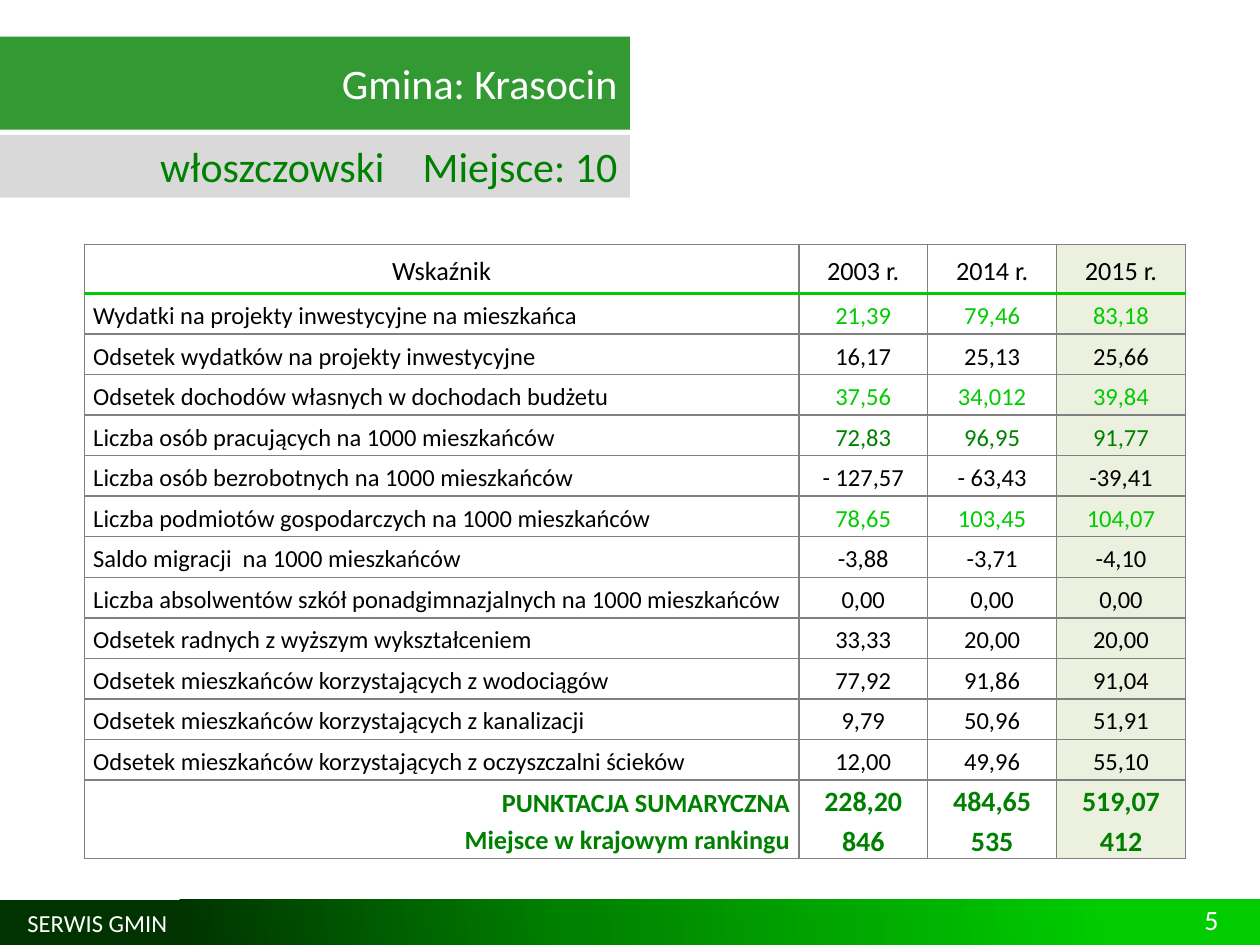
from copy import deepcopy
from dataclasses import dataclass
from typing import NamedTuple

from pptx import Presentation
from pptx.dml.color import RGBColor
from pptx.enum.shapes import MSO_SHAPE as Preset
from pptx.enum.text import MSO_ANCHOR as Anchor, PP_ALIGN as Align
from pptx.oxml import parse_xml
from pptx.oxml.ns import nsdecls, qn
from pptx.util import Inches, Pt

# The slide is a grid of 100 columns by 75 rows.
COLUMNS, ROWS = 100, 75
UNIT = Inches(0.1)


@dataclass(frozen=True)
class Theme:
    font: str = "Calibri"
    black: str = "000000"
    white: str = "FFFFFF"
    bright: str = "00CC00"
    green: str = "008000"
    deep: str = "003300"
    title_bar: str = "339933"
    subtitle_bar: str = "D9D9D9"
    latest_year: str = "EBF1DE"
    rule: str = "808080"
    heading: int = 24
    total: int = 16
    label: int = 15
    body: int = 14


class Area(NamedTuple):
    left: float
    top: float
    width: float
    height: float


class Style(NamedTuple):
    size: int
    color: str
    align: Align = Align.LEFT
    bold: bool = False


class Indicator(NamedTuple):
    name: str
    values: tuple[str, ...]
    color: str


THEME = Theme()
YEARS = ("2003 r.", "2014 r.", "2015 r.")
INDICATORS = [
    Indicator("Wydatki na projekty inwestycyjne na mieszkańca", ("21,39", "79,46", "83,18"), THEME.bright),
    Indicator("Odsetek wydatków na projekty inwestycyjne", ("16,17", "25,13", "25,66"), THEME.black),
    Indicator("Odsetek dochodów własnych w dochodach budżetu", ("37,56", "34,012", "39,84"), THEME.bright),
    Indicator("Liczba osób pracujących na 1000 mieszkańców", ("72,83", "96,95", "91,77"), THEME.green),
    Indicator("Liczba osób bezrobotnych na 1000 mieszkańców", ("- 127,57", "- 63,43", "-39,41"), THEME.black),
    Indicator("Liczba podmiotów gospodarczych na 1000 mieszkańców", ("78,65", "103,45", "104,07"), THEME.bright),
    Indicator("Saldo migracji  na 1000 mieszkańców", ("-3,88", "-3,71", "-4,10"), THEME.black),
    Indicator("Liczba absolwentów szkół ponadgimnazjalnych na 1000 mieszkańców", ("0,00",) * 3, THEME.black),
    Indicator("Odsetek radnych z wyższym wykształceniem", ("33,33", "20,00", "20,00"), THEME.black),
    Indicator("Odsetek mieszkańców korzystających z wodociągów", ("77,92", "91,86", "91,04"), THEME.black),
    Indicator("Odsetek mieszkańców korzystających z kanalizacji", ("9,79", "50,96", "51,91"), THEME.black),
    Indicator("Odsetek mieszkańców korzystających z oczyszczalni ścieków", ("12,00", "49,96", "55,10"), THEME.black),
]
TOTAL_LABELS = ("PUNKTACJA SUMARYCZNA", "Miejsce w krajowym rankingu")
TOTALS = (("228,20", "846"), ("484,65", "535"), ("519,07", "412"))


def grid(*lengths: float) -> list[int]:
    return [round(length * UNIT) for length in lengths]


def style_paragraph(para, style: Style) -> None:
    para.alignment = style.align
    font = para.font
    font.name, font.size, font.bold = THEME.font, Pt(style.size), style.bold
    font.color.rgb = RGBColor.from_string(style.color)


def add_bar(slide, area: Area, color: str | None = None):
    bar = slide.shapes.add_shape(Preset.RECTANGLE, *grid(*area))
    bar.shadow.inherit = False
    bar.line.fill.background()
    if color:
        bar.fill.solid()
        bar.fill.fore_color.rgb = RGBColor.from_string(color)
    return bar


def add_footer_bar(slide, area: Area) -> None:
    fill = add_bar(slide, area).fill
    fill.gradient()
    stop_list = slide.shapes[-1].element.find(".//" + qn("a:gsLst"))
    stop_list.append(deepcopy(stop_list[0]))
    colors = ((0.14, THEME.deep), (0.45, THEME.green), (0.88, THEME.bright))
    for stop, (position, color) in zip(fill.gradient_stops, colors):
        stop.position = position
        stop.color.rgb = RGBColor.from_string(color)
    fill.gradient_angle = 10


def add_heading(slide, area: Area, bar_color: str, words: tuple[str, ...],
                color: str, top_inset: float) -> None:
    """Draw a bar with right-aligned words, kept apart by one widened space."""
    frame = add_bar(slide, area, bar_color).text_frame
    frame.word_wrap = True
    frame.vertical_anchor = Anchor.TOP
    frame.margin_top = Inches(top_inset)
    para = frame.paragraphs[0]
    style_paragraph(para, Style(THEME.heading, color, Align.RIGHT))
    for index, word in enumerate(words):
        if index:
            gap = para.add_run()
            gap.text = " "
            gap.font._element.set("spc", "1630")
        para.add_run().text = word


def add_label(slide, area: Area, text: str, style: Style) -> None:
    frame = slide.shapes.add_textbox(*grid(*area)).text_frame
    frame.word_wrap = True
    frame.vertical_anchor = Anchor.MIDDLE
    frame.paragraphs[0].text = text
    style_paragraph(frame.paragraphs[0], style)


def set_border(cell, side: str, color: str, width: float) -> None:
    cell._tc.get_or_add_tcPr().append(parse_xml(
        f'<a:ln{side} {nsdecls("a")} w="{Pt(width)}"><a:solidFill>'
        f'<a:srgbClr val="{color}"/></a:solidFill></a:ln{side}>'))


def fill_cell(cell, lines: tuple[str, ...], style: Style) -> None:
    cell.vertical_anchor = Anchor.MIDDLE
    cell.margin_left = cell.margin_right = Inches(0.07)
    cell.margin_top = cell.margin_bottom = 0
    frame = cell.text_frame
    frame.text = "\n".join(lines)
    for para in frame.paragraphs:
        style_paragraph(para, style)
        para.line_spacing = 1.15


def add_indicator_table(slide, area: Area) -> None:
    last_row, last_column = len(INDICATORS) + 1, len(YEARS)
    table = slide.shapes.add_table(last_row + 1, last_column + 1, *grid(*area)).table
    table.first_row = table.horz_banding = False
    for column, width in zip(table.columns, grid(56.7, *[10.23] * len(YEARS))):
        column.width = width
    for row, height in zip(table.rows, grid(3.9, *[3.22] * len(INDICATORS), 4.7)):
        row.height = height

    header = Style(THEME.label, THEME.black, Align.CENTER)
    for column, text in enumerate(("Wskaźnik", *YEARS)):
        fill_cell(table.cell(0, column), (text,), header)
    for row, indicator in enumerate(INDICATORS, 1):
        fill_cell(table.cell(row, 0), (indicator.name,), Style(THEME.body, THEME.black))
        for column, value in enumerate(indicator.values, 1):
            fill_cell(table.cell(row, column), (value,),
                      Style(THEME.body, indicator.color, Align.CENTER))
    fill_cell(table.cell(last_row, 0), TOTAL_LABELS,
              Style(THEME.label, THEME.green, Align.RIGHT, True))
    for column, lines in enumerate(TOTALS, 1):
        fill_cell(table.cell(last_row, column), lines,
                  Style(THEME.total, THEME.green, Align.CENTER, True))

    for row in range(last_row + 1):
        for column in range(last_column + 1):
            cell = table.cell(row, column)
            for side in "LRTB":
                under_header = (row, side) in ((0, "B"), (1, "T"))
                set_border(cell, side, *((THEME.bright, 2.25) if under_header else (THEME.rule, 1)))
            if column == last_column:
                cell.fill.solid()
                cell.fill.fore_color.rgb = RGBColor.from_string(THEME.latest_year)
            else:
                cell.fill.background()


def main() -> None:
    deck = Presentation()
    deck.slide_width, deck.slide_height = grid(COLUMNS, ROWS)
    slide = deck.slides.add_slide(deck.slide_layouts[6])

    add_footer_bar(slide, Area(0, 71.4, COLUMNS, 3.6))
    add_indicator_table(slide, Area(6.7, 19.4, 87.4, 47))
    add_label(slide, Area(1.2, 71.4, 31.7, 3.6), "SERWIS GMIN", Style(THEME.body, THEME.white))
    add_heading(slide, Area(0, 2.9, COLUMNS / 2, 7.4), THEME.title_bar,
                ("Gmina: Krasocin",), THEME.white, 0.17)
    add_heading(slide, Area(0, 10.7, COLUMNS / 2, 5), THEME.subtitle_bar,
                ("włoszczowski", "Miejsce: 10"), THEME.green, 0.05)
    add_label(slide, Area(74.4, 71, 23.3, 4), "5", Style(THEME.total, THEME.white, Align.RIGHT))
    deck.save("out.pptx")


if __name__ == "__main__":
    main()
